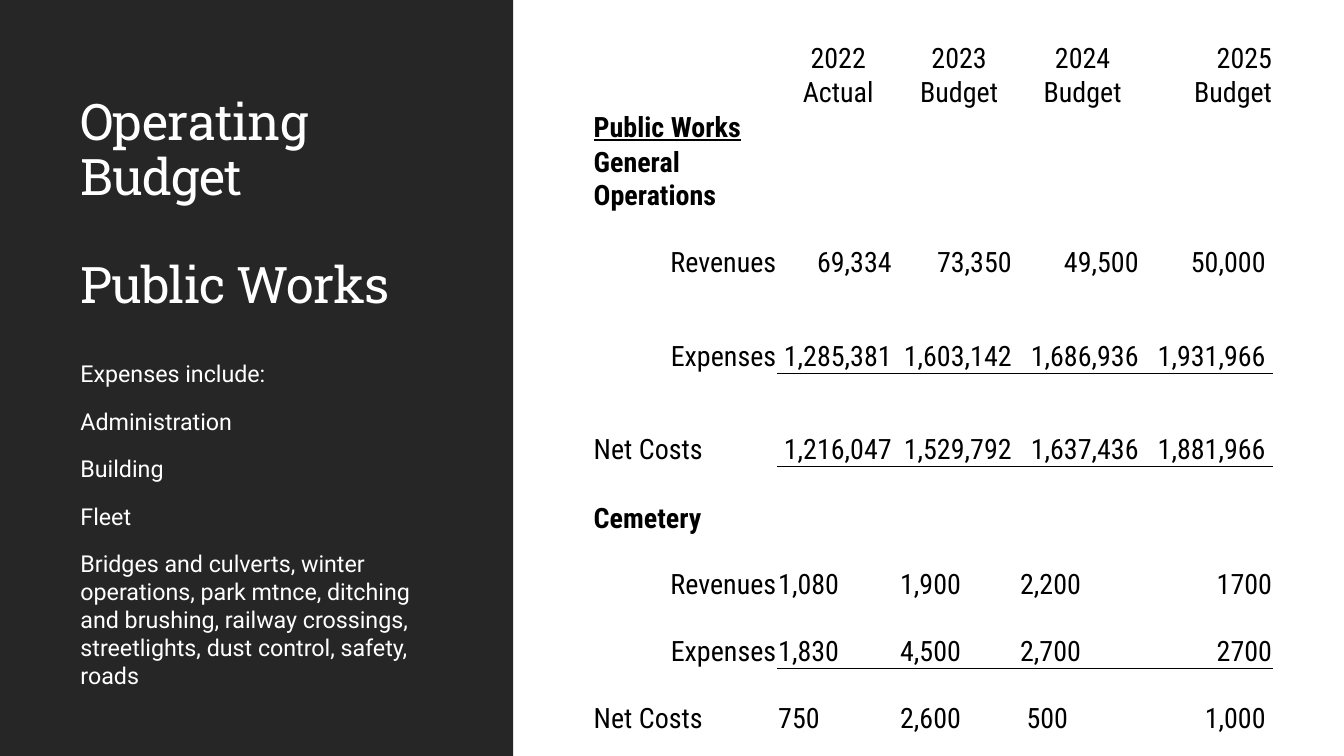
from dataclasses import dataclass

from lxml import etree
from pptx import Presentation
from pptx import util as u
from pptx.dml.color import RGBColor
from pptx.enum import shapes, text
from pptx.oxml import ns

LEFT, CENTER, RIGHT = text.PP_ALIGN.LEFT, text.PP_ALIGN.CENTER, text.PP_ALIGN.RIGHT
NO_STYLE = "{2D5ABB26-0587-4C30-8999-92F81FD0307C}"


@dataclass(frozen=True)
class Theme:
    panel: str = "262626"
    light: str = "FFFFFF"
    ink: str = "000000"
    title_font: str = "Roboto Slab"
    body_font: str = "Roboto"
    table_font: str = "Roboto Condensed"
    title_size: float = 36
    body_size: float = 16.6
    table_size: float = 20
    rule: float = 0.5


@dataclass(frozen=True)
class Row:
    height: float
    label: str = ""
    values: tuple[str, ...] = ()
    label_align: text.PP_ALIGN = LEFT
    aligns: tuple[text.PP_ALIGN, ...] = (RIGHT,) * 4
    pads: tuple[float, ...] = (5.3,) * 4
    bold: bool = False
    underline: bool = False
    rule: str = ""


THEME = Theme()
LINE, DOUBLE, TALL = 24.1, 47.8, 66.9
COLUMNS = (131.8, 87.1, 85.7, 90.7, 90.7)
HEAD = (CENTER,) * 3 + (RIGHT,)
SMALL = (LEFT,) * 3 + (RIGHT,)
FLUSH = (0.7,) * 4

ROWS = (
    Row(LINE, "", ("2022", "2023", "2024", "2025"), aligns=HEAD, pads=FLUSH),
    Row(LINE, "", ("Actual", "Budget", "Budget", "Budget"), aligns=HEAD, pads=FLUSH),
    Row(LINE, "Public Works", bold=True, underline=True),
    Row(DOUBLE, "General Operations", bold=True),
    Row(DOUBLE, "Revenues", ("69,334", "73,350", "49,500", "50,000"), RIGHT),
    Row(TALL, "Expenses", ("1,285,381", "1,603,142", "1,686,936", "1,931,966"),
        RIGHT, rule="lnB"),
    Row(TALL, "Net Costs", ("1,216,047", "1,529,792", "1,637,436", "1,881,966"),
        rule="lnT"),
    Row(LINE),
    Row(LINE, "Cemetery", bold=True),
    Row(DOUBLE, "Revenues", ("1,080", "1,900", "2,200", "1700"), RIGHT, SMALL, FLUSH),
    Row(DOUBLE, "Expenses", ("1,830", "4,500", "2,700", "2700"), RIGHT, SMALL, FLUSH,
        rule="lnB"),
    Row(DOUBLE, "Net Costs", ("750", "2,600", "500", "1,000"), LEFT, SMALL,
        (0.7, 0.7, 5.3, 5.3), rule="lnT"),
)

TITLE = ("Operating Budget", "Public Works")
NOTES = (
    "Expenses include:",
    "Administration",
    "Building",
    "Fleet",
    "Bridges and culverts, winter operations, park mtnce, ditching and brushing, "
    "railway crossings, streetlights, dust control, safety, roads",
)


def style(p, font: str, size: float, color: str) -> None:
    for r in p.runs:
        r.font.name = font
        r.font.size = u.Pt(size)
        r.font.color.rgb = RGBColor.from_string(color)


def add_panel(s) -> None:
    sp = s.shapes.add_shape(shapes.MSO_SHAPE.RECTANGLE, 0, 0, u.Pt(366.5), u.Pt(540))
    sp.shadow.inherit = False
    sp.fill.solid()
    sp.fill.fore_color.rgb = RGBColor.from_string(THEME.panel)
    sp.line.fill.background()


def add_text(s, top: float, height: float, lines: tuple[str, ...],
             font: str, size: float, gap: float):
    """Add white panel text with `gap` points between its paragraphs."""
    sp = s.shapes.add_textbox(u.Pt(50.4), u.Pt(top), u.Pt(277.2), u.Pt(height))
    tf = sp.text_frame
    tf.word_wrap = True
    tf.text = "\n".join(lines)
    for i, p in enumerate(tf.paragraphs):
        p.space_before = u.Pt(gap if i else 0)
        style(p, font, size, THEME.light)
    return tf


def add_title(s) -> None:
    tf = add_text(s, 63.4, 164.9, TITLE, THEME.title_font, THEME.title_size, 38.7)
    tf.vertical_anchor = text.MSO_ANCHOR.BOTTOM
    for p in tf.paragraphs:
        p.line_spacing = 0.9
        for r in p.runs:
            r.font._element.set("spc", "-50")


def add_rule(cell, edge: str) -> None:
    """Draw one cell border; `edge` is lnT or lnB."""
    ln = etree.Element(ns.qn(f"a:{edge}"), w=str(u.Pt(THEME.rule)))
    fill = etree.SubElement(ln, ns.qn("a:solidFill"))
    etree.SubElement(fill, ns.qn("a:srgbClr"), val=THEME.ink)
    cell._tc.get_or_add_tcPr().insert(0, ln)


def fill_cell(cell, value: str, align: text.PP_ALIGN, pad: float, row: Row) -> None:
    """Write a value, with `pad` as inset on the side it is aligned to."""
    cell.fill.background()
    cell.vertical_anchor = text.MSO_ANCHOR.BOTTOM
    cell.margin_left = u.Pt(pad if align == LEFT else 0.7)
    cell.margin_right = u.Pt(pad if align == RIGHT else 0.7)
    cell.margin_top, cell.margin_bottom = u.Pt(0.7), 0
    if not value:
        return
    cell.text_frame.text = value
    p = cell.text_frame.paragraphs[0]
    p.alignment = align
    style(p, THEME.table_font, THEME.table_size, THEME.ink)
    for r in p.runs:
        r.font.bold, r.font.underline = row.bold, row.underline


def add_budget(s) -> None:
    frame = s.shapes.add_table(len(ROWS), len(COLUMNS), u.Pt(423.4), u.Pt(28.8),
                               u.Pt(sum(COLUMNS)), u.Pt(sum(r.height for r in ROWS)))
    table = frame.table
    table.first_row = table.horz_banding = False
    table._tbl.tblPr.find(ns.qn("a:tableStyleId")).text = NO_STYLE
    for column, width in zip(table.columns, COLUMNS):
        column.width = u.Pt(width)
    for i, row in enumerate(ROWS):
        table.rows[i].height = u.Pt(row.height)
        values = (row.label, *(row.values or ("",) * 4))
        aligns = (row.label_align, *row.aligns)
        pads = (0.7, *row.pads)
        for j, (value, align, pad) in enumerate(zip(values, aligns, pads)):
            cell = table.cell(i, j)
            fill_cell(cell, value, align, pad, row)
            if row.rule and j:
                add_rule(cell, row.rule)


def main() -> None:
    prs = Presentation()
    prs.slide_width, prs.slide_height = u.Pt(960), u.Pt(540)
    s = prs.slides.add_slide(prs.slide_layouts[6])
    add_panel(s)
    add_title(s)
    add_text(s, 253.4, 257, NOTES, THEME.body_font, THEME.body_size, 14)
    add_budget(s)
    prs.save("out.pptx")


if __name__ == "__main__":
    main()
